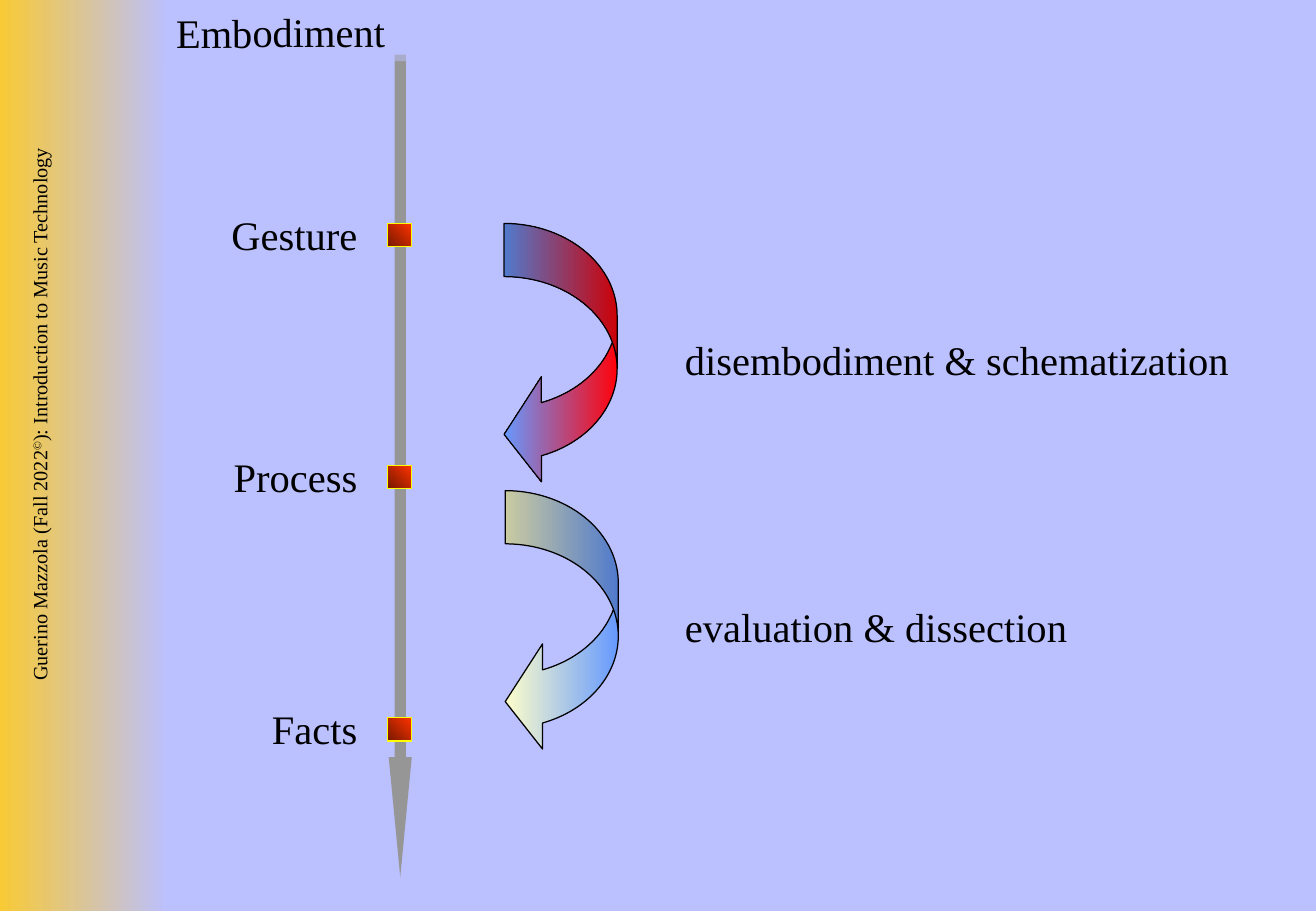
from dataclasses import dataclass

from lxml import etree
from pptx import Presentation
from pptx.dml.color import RGBColor
from pptx.enum.shapes import MSO_SHAPE
from pptx.enum.text import MSO_ANCHOR, PP_ALIGN
from pptx.oxml.ns import qn
from pptx.util import Pt

RECT = MSO_SHAPE.RECTANGLE
NODE = MSO_SHAPE.FLOWCHART_PROCESS
AXIS = MSO_SHAPE.RIGHT_ARROW
CURVE = MSO_SHAPE.CURVED_UP_ARROW
LEFT, RIGHT = PP_ALIGN.LEFT, PP_ALIGN.RIGHT
TOP, MIDDLE = MSO_ANCHOR.TOP, MSO_ANCHOR.MIDDLE

FONT = "Times New Roman"
BLACK, LILAC, GOLD = "000000", "BBC0FF", "FFCB1F"
GREY, YELLOW, BLUE = "969696", "FFFF00", "6699FF"
NODE_X, NODE_W, NODE_H = 229.7, 14.4, 13.7
LABEL_X, LABEL_W, LABEL_UP = 128.9, 90, 11.5
BOX_H = 36


@dataclass
class Level:
    name: str
    top: float


@dataclass
class Step:
    name: str
    left: float
    top: float
    start: str
    end: str


LEVELS = [Level("Gesture", 132.5), Level("Process", 275.8),
          Level("Facts", 425.5)]
STEPS = [Step("disembodiment & schematization", 254.2, 177.1, "FF020B", BLUE),
         Step("evaluation & dissection", 254.9, 335.5, BLUE, "FDFECA")]


def rgb(code: str) -> RGBColor:
    return RGBColor.from_string(code)


def add_shape(slide, kind, left: float, top: float, width: float,
              height: float, line: str = "", turn: float = 0):
    shape = slide.shapes.add_shape(kind, Pt(left), Pt(top), Pt(width),
                                   Pt(height))
    shape.shadow.inherit = False
    shape.rotation = turn
    if line:
        shape.line.color.rgb = rgb(line)
        shape.line.width = Pt(0.75)
    else:
        shape.line.fill.background()
    return shape


def fill_plain(shape, code: str) -> None:
    shape.fill.solid()
    shape.fill.fore_color.rgb = rgb(code)


def fill_blend(shape, start: str, end: str, angle: float = 0) -> None:
    shape.fill.gradient()
    shape.fill.gradient_angle = angle
    for stop, code in zip(shape.fill.gradient_stops, (start, end)):
        stop.color.rgb = rgb(code)


def write(shape, parts: list[str], size: float = 24, align=LEFT,
          wrap: bool = True, anchor=TOP) -> None:
    """Fill the shape with one paragraph, one run per part."""
    frame = shape.text_frame
    frame.word_wrap = wrap
    frame.vertical_anchor = anchor
    para = frame.paragraphs[0]
    para.alignment = align
    for part in parts:
        para.add_run().text = part
    para.font.name = FONT
    para.font.size = Pt(size)
    para.font.color.rgb = rgb(BLACK)


def add_text(slide, left: float, top: float, width: float):
    return slide.shapes.add_textbox(Pt(left), Pt(top), Pt(width), Pt(BOX_H))


def add_side(slide) -> None:
    bar = add_shape(slide, RECT, -10.8, 0, 110.9, 540)
    fill_blend(bar, GOLD, LILAC)
    credit = add_text(slide, -172.8, 266, 406.8)
    credit.rotation = 270
    write(credit, ["Guerino Mazzola (Fall 2022", "©",
                   "): Introduction to Music Technology"], 12, RIGHT)
    sign = credit.text_frame.paragraphs[0].runs[1]
    sign.font._element.set("baseline", "30000")


def add_axis(slide) -> None:
    axis = add_shape(slide, AXIS, -6.5, 269.3, 487.4, 13.7, turn=90)
    axis.adjustments[0] = 0.49
    axis.adjustments[1] = 5.19
    fill_plain(axis, GREY)


def add_level(slide, level: Level) -> None:
    node = add_shape(slide, NODE, NODE_X, level.top, NODE_W, NODE_H, YELLOW)
    fill_blend(node, "761800", "FF3300", 45)
    label = add_text(slide, LABEL_X, level.top - LABEL_UP, LABEL_W)
    write(label, [level.name], align=RIGHT)


def add_step(slide, step: Step) -> None:
    curve = add_shape(slide, CURVE, step.left, step.top, 156.2, 67, BLACK, 270)
    for i, value in enumerate((0.47, 0.93, 0.33)):
        curve.adjustments[i] = value
    fill_blend(curve, step.start, step.end)
    props = curve._element.spPr
    props.find(qn("a:xfrm")).set("flipH", "1")
    props.find(qn("a:gradFill")).set("rotWithShape", "0")
    write(add_text(slide, 398.9, step.top + 18, 369), [step.name])


def add_head(slide) -> None:
    head = add_shape(slide, RECT, 97.2, 0.7, 144.7, BOX_H, turn=359.7)
    fill_plain(head, LILAC)
    color = head._element.spPr.find(qn("a:solidFill"))[0]
    etree.SubElement(color, qn("a:alpha")).set("val", "50000")
    write(head, ["Embodiment"], wrap=False, anchor=MIDDLE)


def main() -> None:
    deck = Presentation()
    deck.slide_width, deck.slide_height = Pt(780), Pt(540)
    slide = deck.slides.add_slide(deck.slide_layouts[6])
    fill_plain(slide.background, LILAC)
    add_side(slide)
    add_axis(slide)
    for level in LEVELS:
        add_level(slide, level)
    for step in STEPS:
        add_step(slide, step)
    add_head(slide)
    deck.save("out.pptx")


if __name__ == "__main__":
    main()
